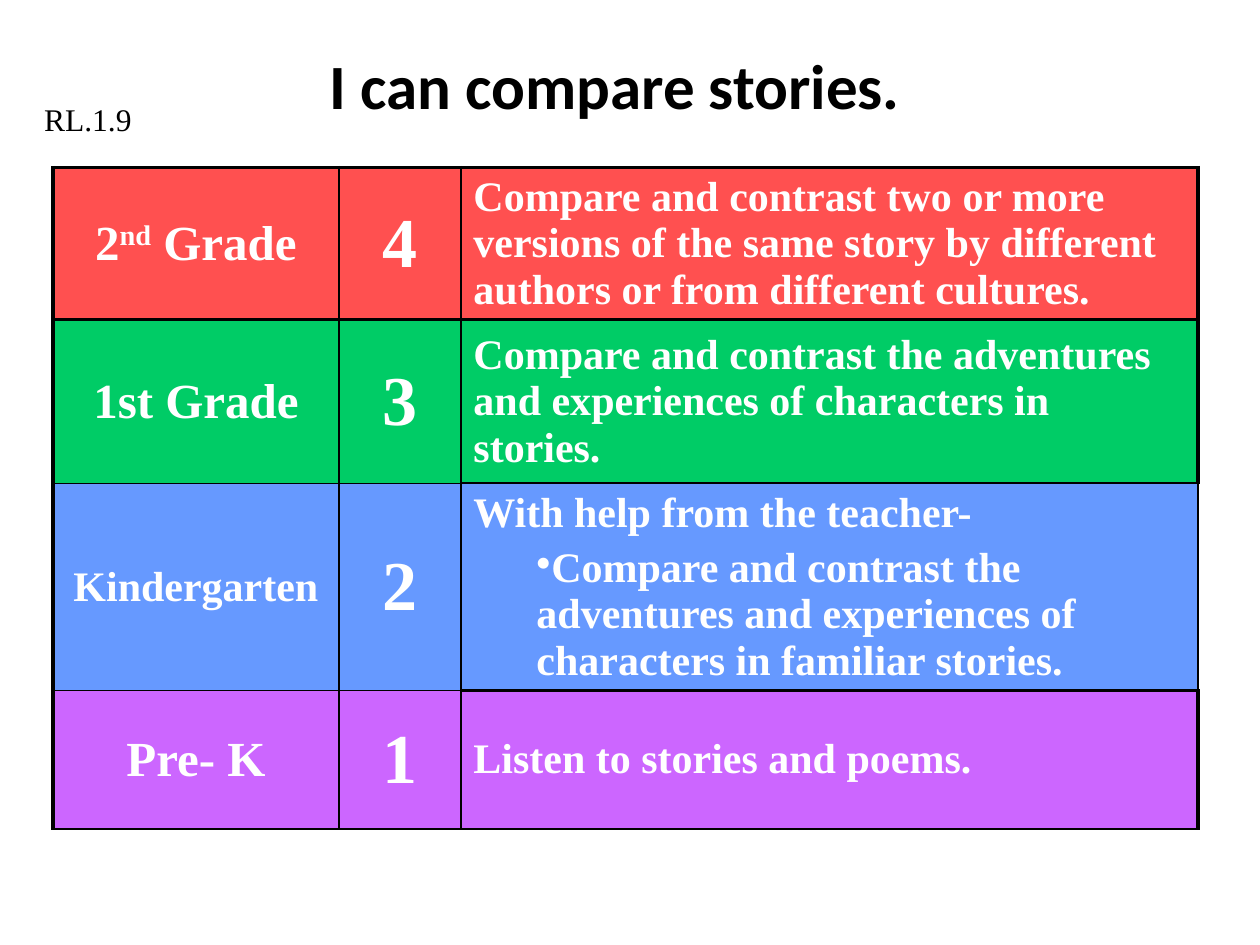
from dataclasses import dataclass

from lxml.etree import SubElement
from pptx import Presentation
from pptx.dml.color import RGBColor
from pptx.enum.text import MSO_ANCHOR, MSO_AUTO_SIZE, PP_ALIGN
from pptx.oxml.ns import qn
from pptx.util import Cm, Pt


@dataclass(frozen=True)
class Theme:
    ink: str = "000000"
    paper: str = "FFFFFF"
    red: str = "FF5050"
    green: str = "00CC66"
    blue: str = "6699FF"
    purple: str = "CC66FF"
    heading_font: str = "Calibri"
    body_font: str = "Times New Roman"
    title: int = 36
    score: int = 40
    grade: int = 28
    body: int = 24
    code: int = 18


THEME = Theme()
COLUMN_WIDTHS = (5.76, 2.46, 14.86)
# (row height, fill, grade as (text, baseline) parts, grade size, score, description)
LEVELS = [
    (2.79, THEME.red, [("2", 0), ("nd", 30), (" Grade", 0)], THEME.grade, "4",
     ["Compare and contrast two or more versions of the same story by different "
      "authors or from different cultures."]),
    (3.3, THEME.green, [("1st Grade", 0)], THEME.grade, "3",
     ["Compare and contrast the adventures and experiences of characters in stories."]),
    (2.79, THEME.blue, [("Kindergarten", 0)], THEME.body, "2",
     ["With help from the teacher-",
      "Compare and contrast the adventures and experiences of characters in "
      "familiar stories."]),
    (2.79, THEME.purple, [("Pre- K", 0)], THEME.grade, "1",
     ["Listen to stories and poems."]),
]
# Border weights in points, from the first edge of the table to the last
ROW_EDGES = (2.25, 1.5, 1, 1, 1.5)
DESCRIPTION_ROW_EDGES = (2.25, 1.5, 1.5, 1.5, 1.5)
COLUMN_EDGES = (2.25, 1, 1, 2.25)
BLUE_COLUMN_EDGES = (2.25, 1.5, 1.5, 1.5)


def add_span(para, text, size, font=THEME.body_font, color=THEME.paper,
             bold=True, baseline=0):
    span = para.add_run()
    span.text = text
    formats = {"name": font, "size": Pt(size), "bold": bold}
    for name, value in formats.items():
        setattr(span.font, name, value)
    span.font.color.rgb = RGBColor.from_string(color)
    if baseline:
        span.font._element.set("baseline", str(baseline * 1000))


def add_bullet(para):
    properties = para._p.get_or_add_pPr()
    properties.set("marL", str(Cm(1.27)))
    properties.set("indent", "0")
    SubElement(properties, qn("a:buChar"), char="•")
    para.level = 1
    para.space_before = Pt(5)


def set_borders(cell, weights):
    """Draw the left, right, top and bottom borders; call before filling the cell."""
    properties = cell._tc.get_or_add_tcPr()
    for side, weight in zip("LRTB", weights):
        line = SubElement(properties, qn(f"a:ln{side}"), w=str(Pt(weight)))
        fill = SubElement(line, qn("a:solidFill"))
        SubElement(fill, qn("a:srgbClr"), val=THEME.ink)


def place_title(page, left, top, width, height):
    title = page.shapes.title
    box = {"left": left, "top": top, "width": width, "height": height}
    for name, value in box.items():
        setattr(title, name, Cm(value))
    title.text_frame.vertical_anchor = MSO_ANCHOR.MIDDLE
    para = title.text_frame.paragraphs[0]
    para.alignment = PP_ALIGN.CENTER
    add_span(para, "I can compare stories.", THEME.title, THEME.heading_font, THEME.ink)


def place_standard_code(page, left, top, width, height):
    box = page.shapes.add_textbox(Cm(left), Cm(top), Cm(width), Cm(height))
    box.text_frame.word_wrap = True
    box.text_frame.auto_size = MSO_AUTO_SIZE.SHAPE_TO_FIT_TEXT
    add_span(box.text_frame.paragraphs[0], "RL.1.9", THEME.code,
             color=THEME.ink, bold=False)


def fill_row(cells, grade, grade_size, score, description):
    grade_cell, score_cell, description_cell = cells
    for cell in (grade_cell, score_cell):
        cell.text_frame.paragraphs[0].alignment = PP_ALIGN.CENTER
    for text, baseline in grade:
        add_span(grade_cell.text_frame.paragraphs[0], text, grade_size, baseline=baseline)
    add_span(score_cell.text_frame.paragraphs[0], score, THEME.score)
    frame = description_cell.text_frame
    for index, text in enumerate(description):
        para = frame.add_paragraph() if index else frame.paragraphs[0]
        if index:
            add_bullet(para)
        add_span(para, text, THEME.body)


def place_scale(page, left, top, width, height):
    frame = page.shapes.add_table(len(LEVELS), len(COLUMN_WIDTHS),
                                  Cm(left), Cm(top), Cm(width), Cm(height))
    table = frame.table
    table.first_row = table.horz_banding = False
    for column, column_width in zip(table.columns, COLUMN_WIDTHS):
        column.width = Cm(column_width)
    for index, (row_height, color, *content) in enumerate(LEVELS):
        row = table.rows[index]
        row.height = Cm(row_height)
        across = BLUE_COLUMN_EDGES if color == THEME.blue else COLUMN_EDGES
        for position, cell in enumerate(row.cells):
            down = DESCRIPTION_ROW_EDGES if position == 2 else ROW_EDGES
            set_borders(cell, across[position:position + 2] + down[index:index + 2])
            cell.fill.solid()
            cell.fill.fore_color.rgb = RGBColor.from_string(color)
            cell.vertical_anchor = MSO_ANCHOR.MIDDLE
        fill_row(row.cells, *content)
    frame.height = Cm(height)


def main():
    deck = Presentation()
    deck.slide_width, deck.slide_height = Cm(25.4), Cm(19.05)
    page = deck.slides.add_slide(deck.slide_layouts[5])
    place_title(page, 0.43, 0.43, 23.93, 2.54)
    place_scale(page, 1.07, 3.38, 23.06, 13.94)
    place_standard_code(page, 0.64, 1.9, 3.6, 1.02)
    deck.save("out.pptx")


if __name__ == "__main__":
    main()
